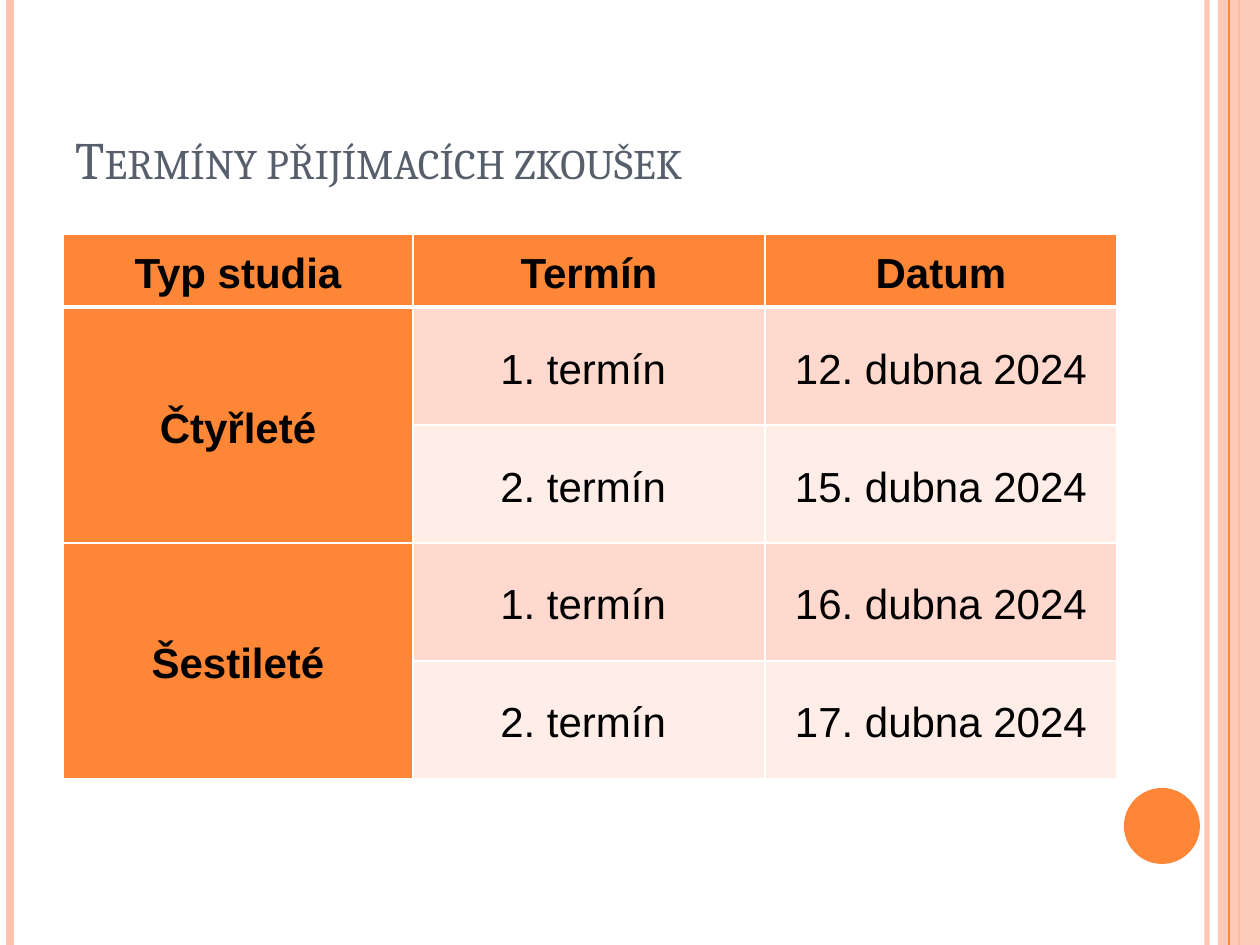
from lxml.etree import SubElement
from pptx import Presentation
from pptx.dml.color import RGBColor
from pptx.enum.shapes import MSO_CONNECTOR, MSO_SHAPE
from pptx.enum.text import MSO_ANCHOR, PP_ALIGN
from pptx.oxml.ns import qn
from pptx.util import Emu, Pt

ORANGE = RGBColor(0xFE, 0x86, 0x37)
PEACH = RGBColor(0xFE, 0xC3, 0xAE)
BAND_DARK = RGBColor(0xFF, 0xD9, 0xCE)
BAND_LIGHT = RGBColor(0xFF, 0xED, 0xE8)
SLATE = RGBColor(0x57, 0x5F, 0x6D)
BLACK = RGBColor(0, 0, 0)
W, H = 1260, 945


def px(n):
    return Emu(n * 914400 // 126)


def set_alpha(fill_parent, percent):
    clr = fill_parent.find(qn("a:solidFill"))[0]
    SubElement(clr, qn("a:alpha")).set("val", str(percent * 1000))


prs = Presentation()
prs.slide_width, prs.slide_height = px(W), px(H)
s = prs.slides.add_slide(prs.slide_layouts[6])

# Side stripes, back to front; the band lies between the last two lines
for x, color, width, alpha in [(1207, PEACH, 3, 93), (10, PEACH, 4.5, 100),
                               (1239, ORANGE, 1.5, 100), (1229, ORANGE, 0.75, 100)]:
    if x == 1229:
        band = s.shapes.add_shape(MSO_SHAPE.RECTANGLE, px(1218), 0, px(42), px(H))
        band.shadow.inherit = False
        band.fill.solid()
        band.fill.fore_color.rgb = PEACH
        set_alpha(band.element.spPr, 87)
        band.line.fill.background()
    line = s.shapes.add_connector(MSO_CONNECTOR.STRAIGHT, px(x), 0, px(x), px(H))
    line.line.color.rgb = color
    line.line.width = Pt(width)
    if alpha < 100:
        set_alpha(line.element.spPr.find(qn("a:ln")), alpha)
    SubElement(line.element.spPr, qn("a:effectLst"))

# Corner dot
dot = s.shapes.add_shape(MSO_SHAPE.OVAL, px(1124), px(788), px(76), px(76))
dot.shadow.inherit = False
dot.fill.solid()
dot.fill.fore_color.rgb = ORANGE
dot.line.fill.background()

# Title
tf = s.shapes.add_textbox(px(63), px(38), px(1029), px(158)).text_frame
tf.word_wrap = True
tf.vertical_anchor = MSO_ANCHOR.BOTTOM
r = tf.paragraphs[0].add_run()
r.text = "Termíny přijímacích zkoušek"
r.font.name, r.font.size = "Cambria", Pt(30)
r.font.color.rgb = SLATE
r.font._element.set("cap", "small")

# Table of exam dates
ROWS = [
    ("Typ studia", "Termín", "Datum"),
    ("Čtyřleté", "1. termín ", "12. dubna 2024"),
    ("", "2. termín ", "15. dubna 2024"),
    ("Šestileté", "1. termín ", "16. dubna 2024"),
    ("", "2. termín ", "17. dubna 2024"),
]
COLS = [350, 352, 352]
HEIGHTS = [73] + [118] * 4
table = s.shapes.add_table(len(ROWS), len(COLS), px(63), px(234),
                           px(sum(COLS)), px(sum(HEIGHTS))).table
for col, width in zip(table.columns, COLS):
    col.width = px(width)
for row, height in zip(table.rows, HEIGHTS):
    row.height = px(height)
for top in (1, 3):
    table.cell(top, 0).merge(table.cell(top + 1, 0))

for i, texts in enumerate(ROWS):
    for j, text in enumerate(texts):
        cell = table.cell(i, j)
        heading = i == 0 or j == 0
        cell.vertical_anchor = MSO_ANCHOR.MIDDLE
        cell.margin_left = cell.margin_right = px(9)
        cell.margin_top = cell.margin_bottom = 0

        # White borders, thicker under the header row
        for side in "LRTB":
            thick = (i, side) in ((0, "B"), (1, "T"))
            ln = SubElement(cell._tc.get_or_add_tcPr(), qn("a:ln" + side))
            ln.set("w", str(Pt(3 if thick else 1)))
            fill = SubElement(ln, qn("a:solidFill"))
            SubElement(fill, qn("a:srgbClr")).set("val", "FFFFFF")
        cell.fill.solid()
        cell.fill.fore_color.rgb = ORANGE if heading else BAND_DARK if i % 2 else BAND_LIGHT

        if not text:
            continue
        p = cell.text_frame.paragraphs[0]
        p.alignment = PP_ALIGN.CENTER
        p.line_spacing = 1.15
        if i > 0:
            p.space_before = p.space_after = Pt(2)
        r = p.add_run()
        r.text = text
        r.font.name, r.font.size, r.font.bold = "Arial", Pt(24), heading
        r.font.color.rgb = BLACK

prs.save("out.pptx")
